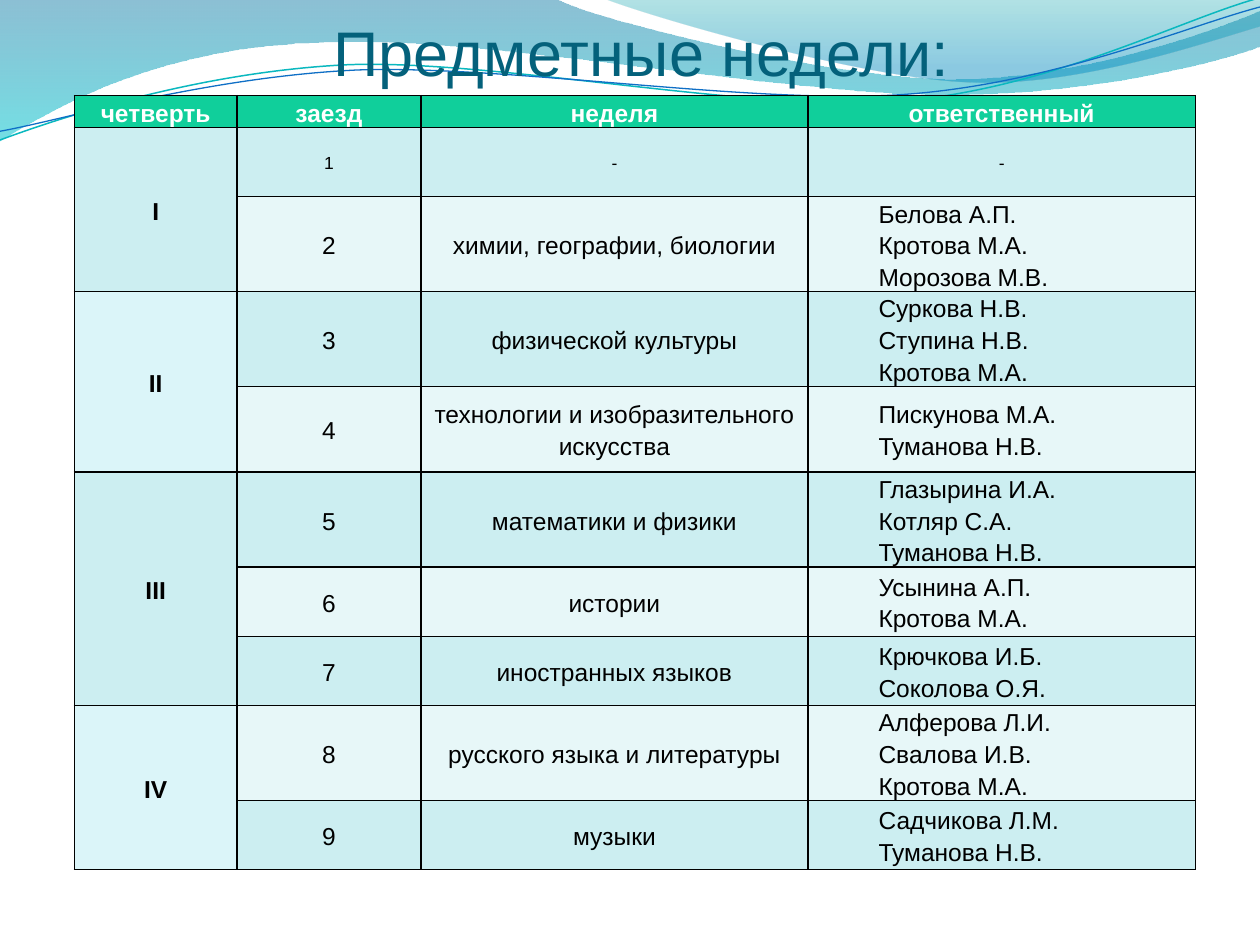
from dataclasses import dataclass

from lxml.etree import SubElement
from pptx import Presentation
from pptx.dml.color import RGBColor
from pptx.enum.text import MSO_ANCHOR, PP_ALIGN
from pptx.oxml import parse_xml
from pptx.oxml.ns import nsdecls, qn
from pptx.util import Pt


@dataclass(frozen=True)
class Theme:
    """Colours, font and type sizes of the slide."""
    font: str = "Arial"
    title: str = "04617B"
    header: str = "10CF9B"
    header_text: str = "FFFFFF"
    text: str = "000000"
    border: str = "000000"
    dark_band: str = "CCEEF1"
    light_band: str = "E7F7F8"
    light_quarter: str = "DBF5F9"
    left_wave: tuple = ((0, "0074A1", 45), (1, "00C6CF", 55))
    right_wave: tuple = ((0, "00A1A9", 30), (0.8, "008BBF", 45))
    teal_line: str = "0AB8BF"
    blue_line: str = "0F6FC6"
    title_size: int = 36
    body_size: int = 14
    small_size: int = 10
    leading: float = 1.29


THEME = Theme()

LEFT_WAVE = [(0, 0), (317, -1), (343, 12, 478, 45, 546, 45), (614, 45, 690, 19, 720, 6),
             (721, 26), (708, 32, 626, 55, 537, 54), (447, 54, 275, 20, 185, 24),
             (93, 26, 33, 60, -1, 81)]
RIGHT_WAVE = [(345, -1), (367, 8, 491, 45, 554, 47), (616, 50, 692, 23, 720, 15), (720, 0)]
TEAL_LINE = [(0, 80), (35, 67, 114, 41, 199, 37), (284, 34, 427, 64, 513, 58),
             (600, 51, 675, 11, 719, -1)]
BLUE_LINE = [(0, 75), (34, 69, 118, 44, 204, 40), (290, 37, 430, 60, 516, 54),
             (602, 48, 678, 15, 720, 4)]

HEADERS = ["четверть", "заезд", "неделя", "ответственный"]
QUARTERS = [
    ("I", [("-", ["-"]),
           ("химии, географии, биологии", ["Белова А.П.", "Кротова М.А.", "Морозова М.В."])]),
    ("II", [("физической культуры", ["Суркова Н.В.", "Ступина Н.В.", "Кротова М.А."]),
            ("технологии и изобразительного искусства", ["Пискунова М.А.", "Туманова Н.В."])]),
    ("III", [("математики и физики", ["Глазырина И.А.", "Котляр С.А.", "Туманова Н.В."]),
             ("истории", ["Усынина А.П.", "Кротова М.А."]),
             ("иностранных языков", ["Крючкова И.Б.", "Соколова О.Я."])]),
    ("IV", [("русского языка и литературы", ["Алферова Л.И.", "Свалова И.В.", "Кротова М.А."]),
            ("музыки", ["Садчикова Л.М.", "Туманова Н.В."])]),
]
COLUMN_WIDTHS = [93, 105, 221.3, 221.3]
ROW_HEIGHTS = [16.5, 39.6, 49, 49, 49, 49, 39.6, 39.6, 49, 39.6]


def rgb(value):
    """Return a colour from its hex value."""
    return RGBColor.from_string(value)


def add_outline(s, path, close):
    """Add a freeform whose six-number segments are cubic curves."""
    points = [(Pt(seg[-2]), Pt(seg[-1])) for seg in path]
    builder = s.shapes.build_freeform(*points[0])
    builder.add_line_segments(points[1:], close=close)
    sp = builder.convert_to_shape()
    sp.shadow.inherit = False
    for seg, line in zip(path[1:], list(sp._element.iter(qn("a:lnTo")))):
        if len(seg) == 6:
            curve = parse_xml(f'<a:cubicBezTo {nsdecls("a")}/>')
            for x, y in zip(seg[::2], seg[1::2]):
                pt = SubElement(curve, qn("a:pt"))
                pt.set("x", str(Pt(x) - sp.left))
                pt.set("y", str(Pt(y) - sp.top))
            line.getparent().replace(line, curve)
    return sp


def add_wave(s, path, stops):
    """Add a wave with a translucent vertical gradient."""
    sp = add_outline(s, path, True)
    sp.line.fill.background()
    sp.fill.gradient()
    sp.fill.gradient_angle = 270
    for stop, (position, color, _) in zip(sp.fill.gradient_stops, stops):
        stop.position = position
        stop.color.rgb = rgb(color)
    for clr, (_, _, alpha) in zip(sp._element.iter(qn("a:srgbClr")), stops):
        SubElement(clr, qn("a:alpha")).set("val", str(alpha * 1000))


def add_curve(s, path, color, width):
    """Add a thin curved line."""
    sp = add_outline(s, path, False)
    sp.fill.background()
    sp.line.color.rgb = rgb(color)
    sp.line.width = Pt(width)


def format_runs(p, size, color, bold=False):
    """Apply the font to each run of a paragraph."""
    for r in p.runs:
        r.font.name = THEME.font
        r.font.size = Pt(size)
        r.font.bold = bold
        r.font.color.rgb = rgb(color)


def add_title(s, text):
    """Add the slide title."""
    tf = s.shapes.add_textbox(Pt(42.5), Pt(0), Pt(648), Pt(51)).text_frame
    tf.word_wrap = True
    tf.vertical_anchor = MSO_ANCHOR.BOTTOM
    tf.margin_left = tf.margin_right = tf.margin_bottom = Pt(0)
    tf.margin_top = Pt(3.6)
    tf.text = text
    p = tf.paragraphs[0]
    p.alignment = PP_ALIGN.CENTER
    format_runs(p, THEME.title_size, THEME.title)


def style_cell(cell, fill):
    """Set the fill, margins and borders of a cell."""
    cell.fill.solid()
    cell.fill.fore_color.rgb = rgb(fill)
    cell.margin_left = cell.margin_right = Pt(4.3)
    cell.margin_top = cell.margin_bottom = Pt(0)
    for i, side in enumerate("LRTB"):
        cell._tc.get_or_add_tcPr().insert(i, parse_xml(
            f'<a:ln{side} {nsdecls("a")} w="{Pt(1)}"><a:solidFill>'
            f'<a:srgbClr val="{THEME.border}"/></a:solidFill></a:ln{side}>'))


def write_cell(cell, text, size=THEME.body_size, color=THEME.text, bold=False,
               indented=False, anchor=MSO_ANCHOR.MIDDLE):
    """Write centred or indented lines into a cell."""
    cell.vertical_anchor = anchor
    cell.text_frame.text = text
    for p in cell.text_frame.paragraphs:
        p.line_spacing = Pt(size * THEME.leading)
        p.space_before = p.space_after = Pt(0)
        if indented:
            p.level = 1
            p._p.get_or_add_pPr().set("marL", str(Pt(36)))
        else:
            p.alignment = PP_ALIGN.CENTER
        format_runs(p, size, color, bold)


def add_schedule(s):
    """Add the table of subject weeks."""
    table = s.shapes.add_table(len(ROW_HEIGHTS), len(HEADERS), Pt(42.5), Pt(54.7),
                               Pt(sum(COLUMN_WIDTHS)), Pt(sum(ROW_HEIGHTS))).table
    for column, width in zip(table.columns, COLUMN_WIDTHS):
        column.width = Pt(width)
    for row, height in zip(table.rows, ROW_HEIGHTS):
        row.height = Pt(height)
    for col, header in enumerate(HEADERS):
        cell = table.cell(0, col)
        style_cell(cell, THEME.header)
        write_cell(cell, header, color=THEME.header_text, bold=True,
                   anchor=MSO_ANCHOR.TOP if col < 2 else MSO_ANCHOR.MIDDLE)
    row = 1
    for index, (quarter, weeks) in enumerate(QUARTERS):
        first = row
        for week, people in weeks:
            band = THEME.dark_band if row % 2 else THEME.light_band
            style_cell(table.cell(row, 0), THEME.light_quarter if index % 2 else THEME.dark_band)
            size = THEME.small_size if week == "-" else THEME.body_size
            for col, text in enumerate([str(row), week, "\n".join(people)], 1):
                style_cell(table.cell(row, col), band)
                write_cell(table.cell(row, col), text, size, indented=col == 3 and week != "-")
            row += 1
        table.cell(first, 0).merge(table.cell(row - 1, 0))
        write_cell(table.cell(first, 0), quarter, bold=True)


def main():
    """Build and save the slide."""
    prs = Presentation()
    prs.slide_width, prs.slide_height = Pt(720), Pt(540)
    s = prs.slides.add_slide(prs.slide_layouts[6])
    add_wave(s, LEFT_WAVE, THEME.left_wave)
    add_wave(s, RIGHT_WAVE, THEME.right_wave)
    add_curve(s, TEAL_LINE, THEME.teal_line, 0.85)
    add_curve(s, BLUE_LINE, THEME.blue_line, 0.75)
    add_title(s, "Предметные недели:")
    add_schedule(s)
    prs.save("out.pptx")


if __name__ == "__main__":
    main()
